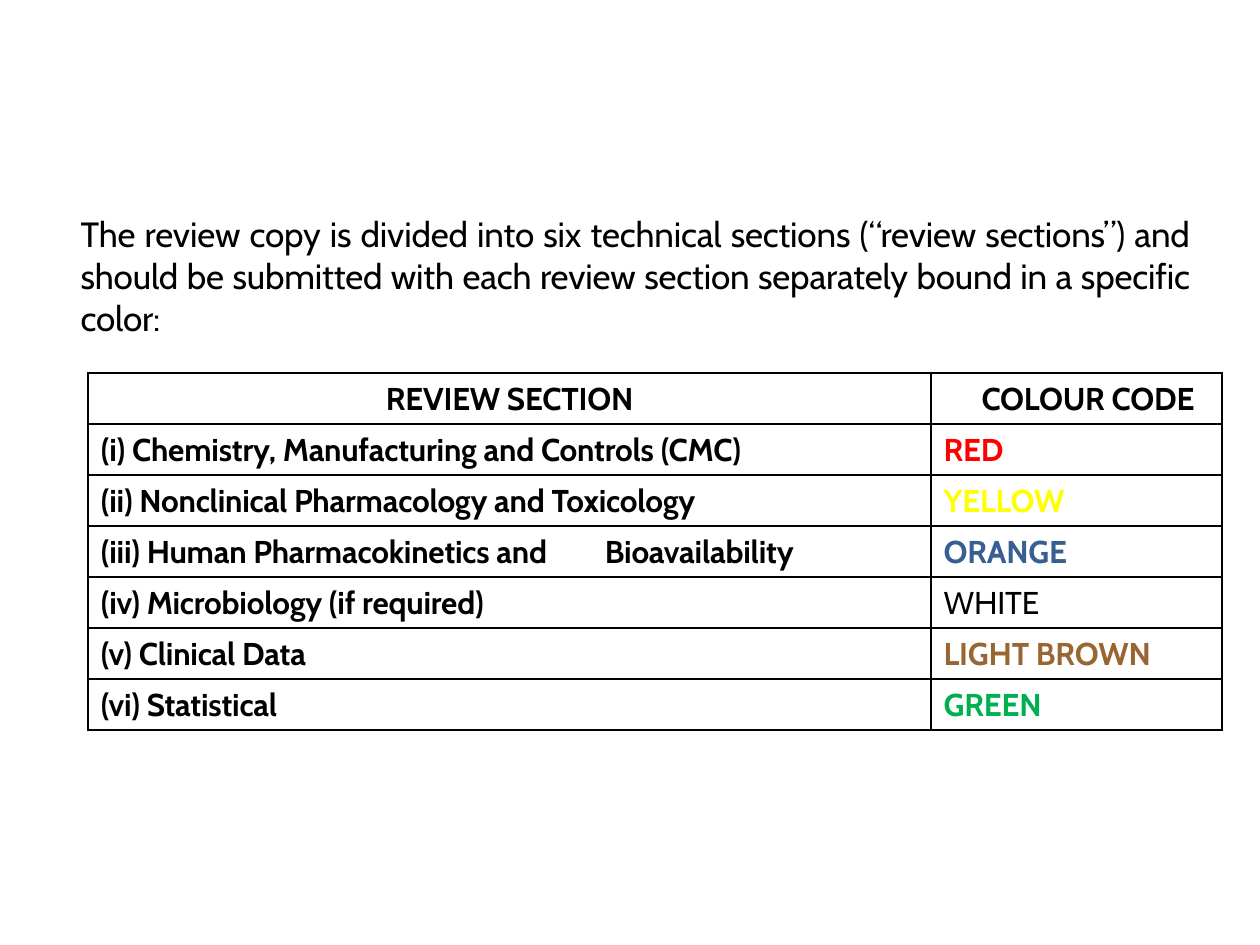
from typing import NamedTuple

from pptx import Presentation
from pptx import util as u
from pptx.dml.color import RGBColor
from pptx.enum import text as t
from pptx.oxml import parse_xml
from pptx.oxml.ns import nsdecls

COLORS = {
    "black": "000000",
    "red": "FF0000",
    "yellow": "FFFF00",
    "blue": "375F92",
    "brown": "996633",
    "green": "00AF50",
}
FONT = "Cabin"
TRACKING = "-10"  # hundredths of a point


class ReviewSection(NamedTuple):
    title: str
    code: str
    color: str
    code_bold: bool = True


SECTIONS = [
    ReviewSection("(i) Chemistry, Manufacturing and Controls (CMC)", "RED", "red"),
    ReviewSection("(ii) Nonclinical Pharmacology and Toxicology", "YELLOW", "yellow"),
    ReviewSection("(iii) Human Pharmacokinetics and\tBioavailability", "ORANGE", "blue"),
    ReviewSection("(iv) Microbiology (if required)", "WHITE", "black", False),
    ReviewSection("(v) Clinical Data", "LIGHT BROWN", "brown"),
    ReviewSection("(vi) Statistical", "GREEN", "green"),
]
INTRO = (
    "The review copy is divided into six technical sections (“review sections”) and "
    "should be submitted with each review section separately bound in a specific color:"
)


def write(frame, content: str, *, size: float = 18, color: str = "black",
          bold: bool = True, align=t.PP_ALIGN.LEFT, indent: float = 0.1,
          tab: float | None = None) -> None:
    """Fill a text frame with one formatted paragraph."""
    paragraph = frame.paragraphs[0]
    paragraph.alignment = align
    properties = paragraph._p.get_or_add_pPr()
    properties.set("marL", str(u.Inches(indent)))
    properties.set("indent", "0")
    if tab is not None:
        properties.append(parse_xml(
            f'<a:tabLst {nsdecls("a")}><a:tab pos="{u.Inches(tab)}" algn="l"/></a:tabLst>'))
    run = paragraph.add_run()
    run.text = content
    run.font.name = FONT
    run.font.size = u.Pt(size)
    run.font.bold = bold
    run.font.color.rgb = RGBColor.from_string(COLORS[color])
    run._r.get_or_add_rPr().set("spc", TRACKING)


def set_margins(box, top: float) -> None:
    box.margin_left = box.margin_right = box.margin_bottom = 0
    box.margin_top = u.Inches(top)


def style_cell(cell) -> None:
    """Give a cell black borders, no fill and tight margins."""
    properties = cell._tc.get_or_add_tcPr()
    for side in ("lnL", "lnR", "lnT", "lnB"):
        properties.append(parse_xml(
            f'<a:{side} {nsdecls("a")} w="{u.Pt(1)}"><a:solidFill>'
            f'<a:srgbClr val="{COLORS["black"]}"/></a:solidFill></a:{side}>'))
    cell.fill.background()
    set_margins(cell, 0.06)


def add_intro(slide) -> None:
    box = slide.shapes.add_textbox(u.Inches(0.63), u.Inches(1.66),
                                   u.Inches(8.81), u.Inches(1.03))
    frame = box.text_frame
    frame.word_wrap = True
    set_margins(frame, 0.03)
    write(frame, INTRO, size=20, bold=False, align=t.PP_ALIGN.JUSTIFY, indent=0.01)


def add_section_table(slide) -> None:
    row_count = len(SECTIONS) + 1
    row_height = u.Inches(0.405)
    table = slide.shapes.add_table(row_count, 2, u.Inches(0.7), u.Inches(2.96),
                                   u.Inches(9), row_height * row_count).table
    table.first_row = table.horz_banding = False
    for column, width in zip(table.columns, (6.69, 2.31)):
        column.width = u.Inches(width)
    for row in table.rows:
        row.height = row_height
    for cell in table.iter_cells():
        style_cell(cell)

    # Header
    write(table.cell(0, 0).text_frame, "REVIEW SECTION",
          align=t.PP_ALIGN.CENTER, indent=0)
    write(table.cell(0, 1).text_frame, "COLOUR CODE", indent=0.4)

    # One row per review section
    for row, section in enumerate(SECTIONS, start=1):
        write(table.cell(row, 0).text_frame, section.title,
              tab=3.87 if "\t" in section.title else None)
        write(table.cell(row, 1).text_frame, section.code,
              color=section.color, bold=section.code_bold)


def main() -> None:
    deck = Presentation()
    deck.slide_width, deck.slide_height = u.Inches(10), u.Inches(7.5)
    slide = deck.slides.add_slide(deck.slide_layouts[6])
    add_section_table(slide)
    add_intro(slide)
    deck.save("out.pptx")


if __name__ == "__main__":
    main()
